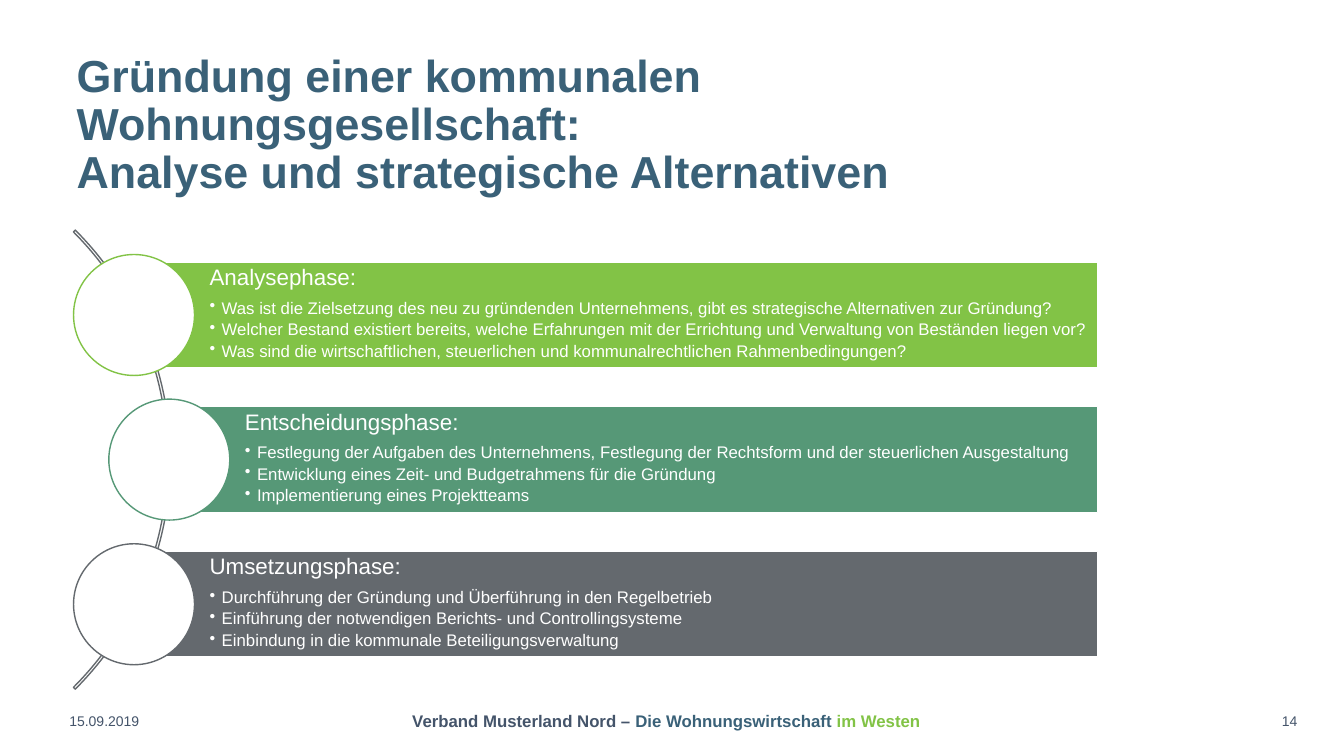
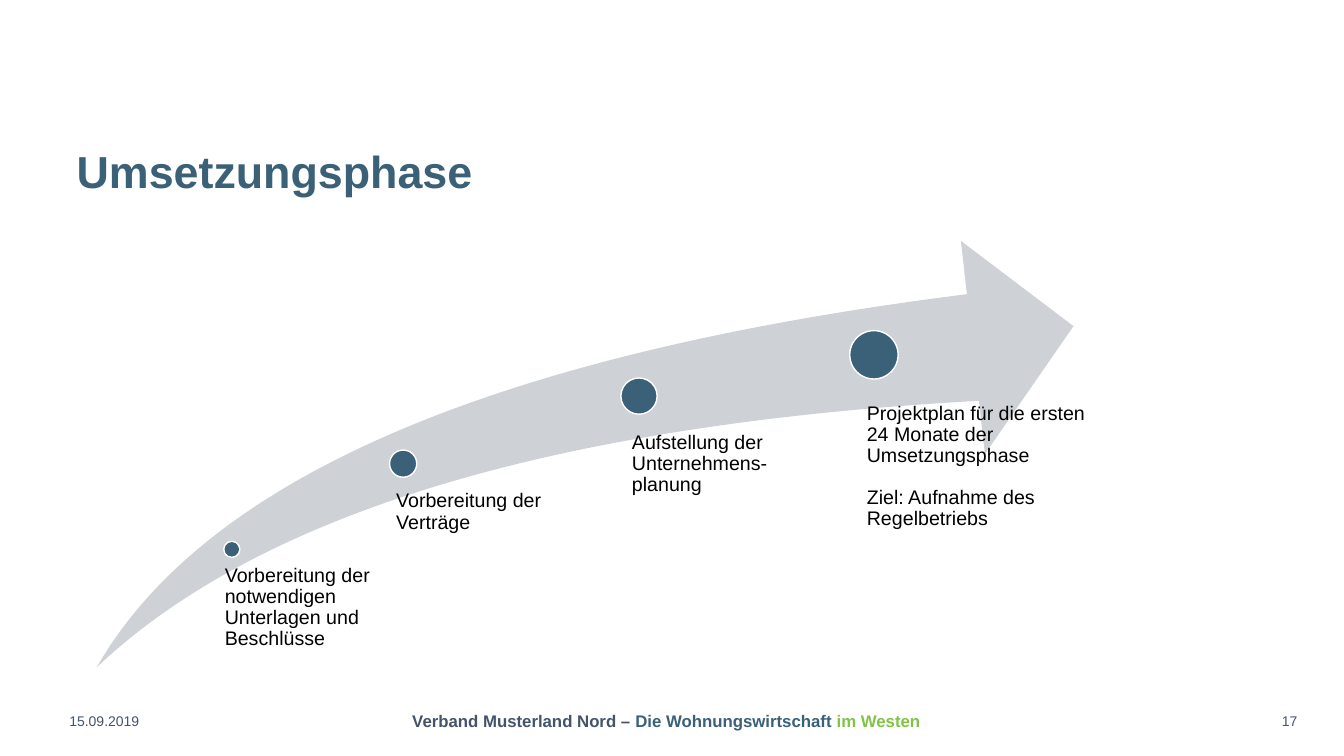
from lxml.etree import SubElement
from pptx import Presentation
from pptx.dml.color import RGBColor
from pptx.enum.shapes import MSO_SHAPE as Preset
from pptx.enum.text import MSO_ANCHOR as Anchor, PP_ALIGN as Align
from pptx.oxml.ns import qn
from pptx.util import Emu, Inches, Pt

# Shared look
FONT = "Arial"
BLUE = RGBColor(0x3A, 0x61, 0x78)
LIME = RGBColor(0x82, 0xC3, 0x46)
GREEN = RGBColor(0x56, 0x98, 0x77)
GREY = RGBColor(0x64, 0x69, 0x6E)
SLATE = RGBColor(0x44, 0x54, 0x6A)
SILVER = RGBColor(0xCE, 0xD2, 0xD6)
WHITE = RGBColor(0xFF, 0xFF, 0xFF)
BLACK = RGBColor(0, 0, 0)
TITLE_BOX = (0.66, 0.38, 10.3, 1.64)
FOOTER_TOP, FOOTER_HEIGHT = 6.95, 0.4

# Content
DATE = "15.09.2019"
MOTTO = [
    ("Verband Musterland Nord – ", SLATE),
    ("Die Wohnungswirtschaft ", BLUE),
    ("im Westen", LIME),
]
PHASES_TITLE = ("Gründung einer kommunalen Wohnungsgesellschaft:\v"
                "Analyse und strategische Alternativen")
PHASES = [  # heading, colour, left edge, points
    ("Analysephase:", LIME, 1.32, [
        "Was ist die Zielsetzung des neu zu gründenden Unternehmens, "
        "gibt es strategische Alternativen zur Gründung?",
        "Welcher Bestand existiert bereits, welche Erfahrungen mit der "
        "Errichtung und Verwaltung von Beständen liegen vor?",
        "Was sind die wirtschaftlichen, steuerlichen und "
        "kommunalrechtlichen Rahmenbedingungen?",
    ]),
    ("Entscheidungsphase:", GREEN, 1.67, [
        "Festlegung der Aufgaben des Unternehmens, Festlegung der "
        "Rechtsform und der steuerlichen Ausgestaltung",
        "Entwicklung eines Zeit- und Budgetrahmens für die Gründung",
        "Implementierung eines Projektteams",
    ]),
    ("Umsetzungsphase:", GREY, 1.32, [
        "Durchführung der Gründung und Überführung in den Regelbetrieb",
        "Einführung der notwendigen Berichts- und Controllingsysteme",
        "Einbindung in die kommunale Beteiligungsverwaltung",
    ]),
]
STEPS_TITLE = "Umsetzungsphase"
STEPS = [  # dot centre, dot size, label size, label paragraphs
    ((2.3, 5.45), 0.16, (1.69, 1.01),
     ["Vorbereitung der notwendigen Unterlagen und Beschlüsse"]),
    ((4.0, 4.6), 0.27, (1.63, 1.25), ["Vorbereitung der Verträge"]),
    ((6.34, 3.93), 0.36, (1.7, 1.7), ["Aufstellung der Unternehmens-planung"]),
    ((8.67, 3.52), 0.48, (2.5, 1.97),
     ["Projektplan für die ersten 24 Monate der Umsetzungsphase",
      "Ziel: Aufnahme des Regelbetriebs"]),
]


# Helpers
def style(run, size, color, bold=False):
    font = run.font
    font.name, font.size, font.bold = FONT, Pt(size), bold
    font.color.rgb = color


def add_preset(slide, preset, box, fill=None, line=None):
    shape = slide.shapes.add_shape(preset, *map(Inches, box))
    shape.shadow.inherit = False
    if fill is None:
        shape.fill.background()
    else:
        shape.fill.solid()
        shape.fill.fore_color.rgb = fill
    if line is None:
        shape.line.fill.background()
    else:
        shape.line.color.rgb = line
        shape.line.width = Pt(1)
    return shape


def add_dot(slide, center, size, fill, line):
    x, y = center
    add_preset(slide, Preset.OVAL, (x - size / 2, y - size / 2, size, size), fill, line)


def set_margins(frame, left, other):
    frame.margin_left = Inches(left)
    frame.margin_top = frame.margin_right = frame.margin_bottom = Inches(other)


def add_bullet(paragraph, indent):
    props = paragraph._p.get_or_add_pPr()
    props.set("marL", str(Inches(indent)))
    props.set("indent", str(-Inches(indent)))
    SubElement(props, qn("a:buChar")).set("char", "•")


def add_footer_part(slide, left, width, parts, size, align, bold=False):
    box = slide.shapes.add_textbox(
        *map(Inches, (left, FOOTER_TOP, width, FOOTER_HEIGHT)))
    frame = box.text_frame
    frame.word_wrap = True
    frame.vertical_anchor = Anchor.MIDDLE
    paragraph = frame.paragraphs[0]
    paragraph.alignment = align
    for text, color in parts:
        run = paragraph.add_run()
        run.text = text
        style(run, size, color, bold)


def start_slide(deck, title, number):
    slide = deck.slides.add_slide(deck.slide_layouts.get_by_name("Title Only"))
    heading = slide.shapes.title
    heading.left, heading.top, heading.width, heading.height = map(Inches, TITLE_BOX)
    frame = heading.text_frame
    frame.text = title
    frame.word_wrap = True
    frame.vertical_anchor = Anchor.BOTTOM
    paragraph = frame.paragraphs[0]
    paragraph.alignment = Align.LEFT
    paragraph.line_spacing = 0.9
    for run in paragraph.runs:
        style(run, 32, BLUE, True)
    add_footer_part(slide, 0.59, 1.03, [(DATE, SLATE)], 10, Align.LEFT)
    add_footer_part(slide, 3.79, 5.64, MOTTO, 12, Align.CENTER, True)
    add_footer_part(slide, 12.04, 0.93, [(str(number), SLATE)], 10, Align.RIGHT)
    return slide


# Slide with three phases along an arc
def build_phases(deck):
    slide = start_slide(deck, PHASES_TITLE, 14)
    arc = add_preset(slide, Preset.BLOCK_ARC, (-4.75, 1.34, 6.44, 6.44), line=GREY)
    for index, value in enumerate((189, 27, 0.004)):
        arc.adjustments[index] = value

    first_top, pitch, height, right = 2.6, 1.435, 1.05, 10.89
    for row, (heading, color, left, points) in enumerate(PHASES):
        top = first_top + row * pitch
        band = add_preset(slide, Preset.RECTANGLE,
                          (left, top, right - left, height), color, WHITE)
        frame = band.text_frame
        frame.word_wrap = True
        frame.vertical_anchor = Anchor.TOP
        set_margins(frame, 0.76, 0.04)
        frame.text = "\n".join([heading, *points])
        for index, paragraph in enumerate(frame.paragraphs):
            is_heading = index == 0
            paragraph.alignment = Align.LEFT
            paragraph.line_spacing = 0.9
            paragraph.space_after = Pt(6.7 if is_heading else 2.4)
            style(paragraph.runs[0], 16 if is_heading else 12, WHITE)
            if not is_heading:
                paragraph.level = 1
                add_bullet(paragraph, 0.12)
        add_dot(slide, (left + 0.01, top + height / 2), 1.2, WHITE, color)


# Slide with four steps on a rising arrow
def build_steps(deck):
    slide = start_slide(deck, STEPS_TITLE, 17)
    arrow = add_preset(slide, Preset.SWOOSH_ARROW, (0.96, 2.39, 9.69, 4.23), SILVER)
    arrow.adjustments[0] = arrow.adjustments[1] = 0.25

    for (x, y), size, (width, height), texts in STEPS:
        add_dot(slide, (x, y), size, BLUE, WHITE)
        inset = 0.52 * size
        label = slide.shapes.add_textbox(
            *map(Inches, (x - 0.07 - inset, y + size, width, height)))
        frame = label.text_frame
        frame.word_wrap = True
        set_margins(frame, inset, 0)
        frame.text = "\n".join(texts)
        for index, paragraph in enumerate(frame.paragraphs):
            paragraph.line_spacing = 0.9
            paragraph.space_before = Pt(15 if index else 0)
            style(paragraph.runs[0], 14, BLACK)


def main():
    deck = Presentation()
    deck.slide_width, deck.slide_height = Emu(12192000), Inches(7.5)
    build_phases(deck)
    build_steps(deck)
    deck.save("out.pptx")


if __name__ == "__main__":
    main()
